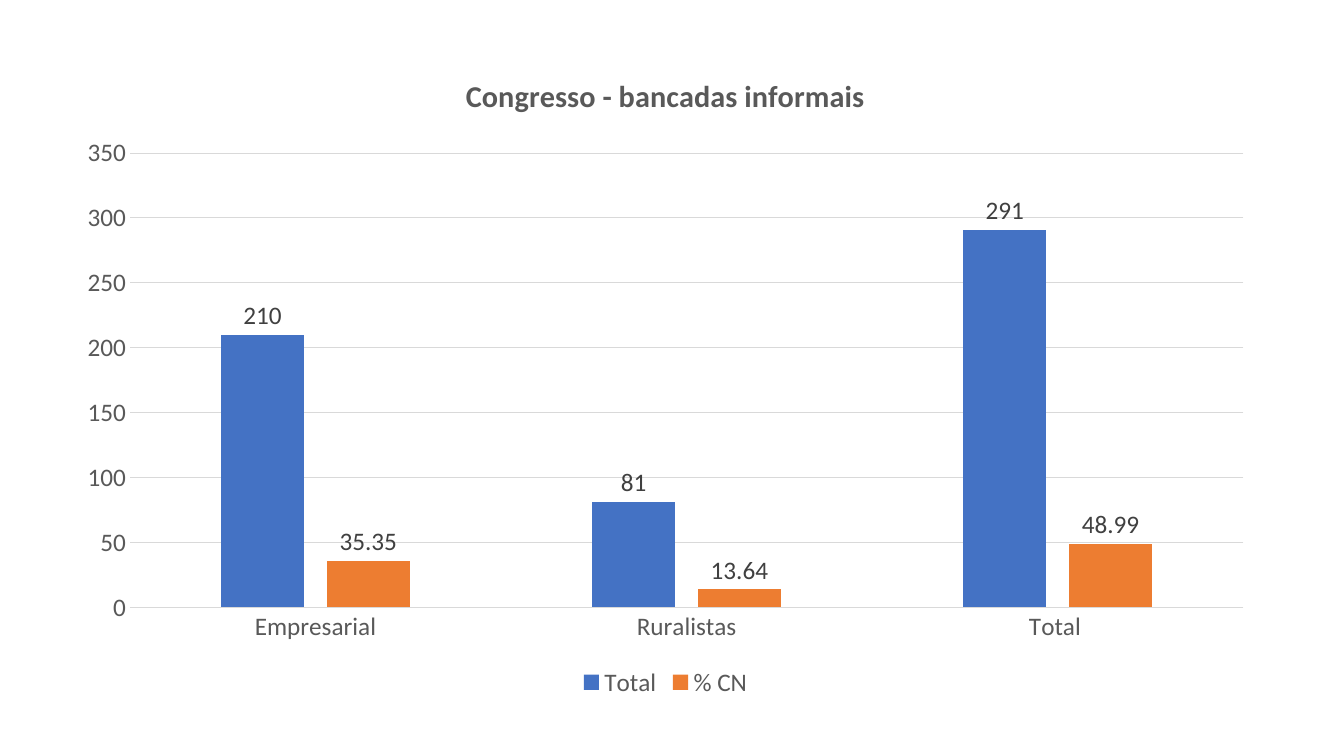
"""Build a slide with a column chart of informal caucuses in Congress."""
import dataclasses

import pptx
import pptx.chart.data
import pptx.dml.color
import pptx.enum.chart
import pptx.util

Inches = pptx.util.Inches
Pt = pptx.util.Pt

TITLE = "Congresso - bancadas informais"
CATEGORIES = ["Empresarial", "Ruralistas", "Total "]
SERIES = [
    {"name": "Total", "values": [210, 81, 291], "color": "4472C4", "format": "General"},
    {"name": "% CN", "values": [35.35, 13.64, 48.99], "color": "ED7D31", "format": "0.00"},
]
SLIDE_SIZE = (13.33, 7.5)
CHART_BOX = (0.63, 0.5, 11.94, 6.47)


@dataclasses.dataclass(frozen=True)
class Theme:
    font: str = "Calibri"
    body_size: float = 18
    title_size: float = 21.6
    black: str = "000000"
    text: str = "595959"
    label: str = "404040"
    rule: str = "D9D9D9"
    rule_width: float = 0.75


THEME = Theme()


def rgb(color):
    return pptx.dml.color.RGBColor.from_string(color)


def style_font(font, color, size=THEME.body_size, bold=False):
    font.name = THEME.font
    font.size = Pt(size)
    font.bold = bold
    font.color.rgb = rgb(color)


def style_rule(line):
    line.color.rgb = rgb(THEME.rule)
    line.width = Pt(THEME.rule_width)


def add_caucus_chart(slide):
    chart_data = pptx.chart.data.CategoryChartData()
    chart_data.categories = CATEGORIES
    for entry in SERIES:
        chart_data.add_series(entry["name"], entry["values"], entry["format"])
    return slide.shapes.add_chart(
        pptx.enum.chart.XL_CHART_TYPE.COLUMN_CLUSTERED,
        *map(Inches, CHART_BOX),
        chart_data,
    ).chart


def style_title_and_legend(chart):
    chart.has_title = True
    run = chart.chart_title.text_frame.paragraphs[0].add_run()
    run.text = TITLE
    style_font(run.font, THEME.text, THEME.title_size, bold=True)
    chart.chart_title.include_in_layout = False
    chart.has_legend = True
    chart.legend.position = pptx.enum.chart.XL_LEGEND_POSITION.BOTTOM
    chart.legend.include_in_layout = False
    style_font(chart.legend.font, THEME.text)


def style_axes(chart):
    for axis in (chart.category_axis, chart.value_axis):
        axis.major_tick_mark = pptx.enum.chart.XL_TICK_MARK.NONE
        axis.minor_tick_mark = pptx.enum.chart.XL_TICK_MARK.NONE
        style_font(axis.tick_labels.font, THEME.text)
    style_rule(chart.category_axis.format.line)
    chart.value_axis.format.line.fill.background()
    chart.value_axis.has_major_gridlines = True
    style_rule(chart.value_axis.major_gridlines.format.line)


def style_columns(plot):
    plot.gap_width = 219
    plot.overlap = -27
    plot.vary_by_categories = False
    for series, entry in zip(plot.series, SERIES):
        series.format.fill.solid()
        series.format.fill.fore_color.rgb = rgb(entry["color"])
        series.invert_if_negative = False
        labels = series.data_labels
        labels.show_value = True
        labels.position = pptx.enum.chart.XL_LABEL_POSITION.OUTSIDE_END
        labels.number_format = entry["format"]
        labels.number_format_is_linked = False
        style_font(labels.font, THEME.label)


def main():
    presentation = pptx.Presentation()
    presentation.slide_width, presentation.slide_height = map(Inches, SLIDE_SIZE)
    blank_layout = presentation.slide_layouts.get_by_name("Blank")
    slide = presentation.slides.add_slide(blank_layout)
    chart = add_caucus_chart(slide)
    style_font(chart.font, THEME.black)
    style_title_and_legend(chart)
    style_axes(chart)
    style_columns(chart.plots[0])
    presentation.save("out.pptx")


if __name__ == "__main__":
    main()
